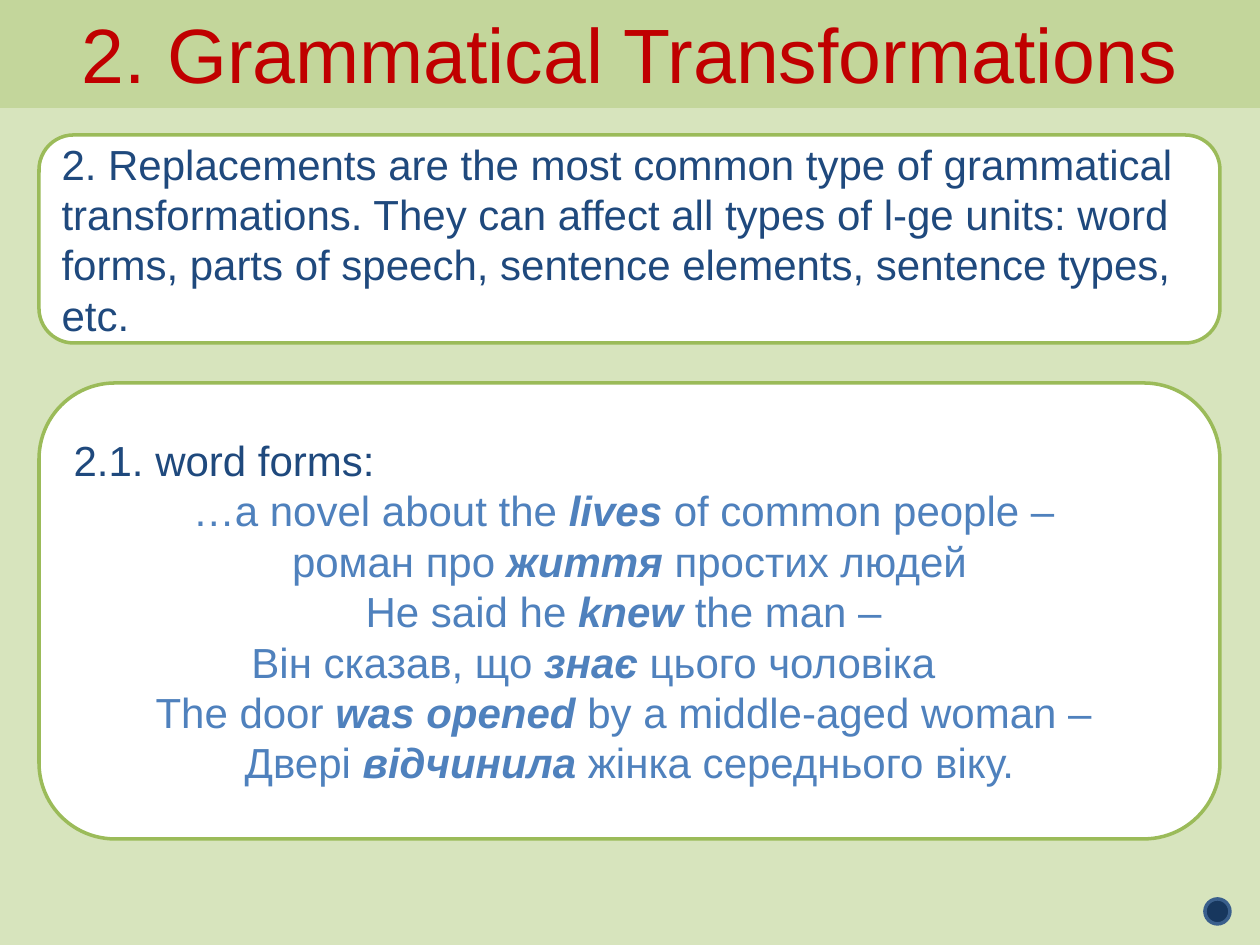
from pptx import Presentation
from pptx.dml.color import RGBColor
from pptx.enum.shapes import MSO_SHAPE
from pptx.enum.text import MSO_ANCHOR, PP_ALIGN
from pptx.util import Emu, Pt

PX = 914400 // 126
NAVY, BLUE, GREEN = "1F497D", "4F81BD", "9BBB59"

EXAMPLES = [
    ("…a novel about the ", "lives", " of common people – "),
    ("роман про ", "життя", " простих людей"),
    ("He said he ", "knew", " the man – "),
    ("Він сказав, що ", "знає", " цього чоловіка\t\t"),
    ("The door ", "was opened", " by a middle-aged woman – "),
    ("Двері ", "відчинила", " жінка середнього віку."),
]


def color(hex_text):
    return RGBColor.from_string(hex_text)


def add_box(s, kind, box, fill, line):
    sp = s.shapes.add_shape(kind, *(Emu(v * PX) for v in box))
    sp.shadow.inherit = False
    sp.fill.solid()
    sp.fill.fore_color.rgb = color(fill)
    sp.line.color.rgb = color(line)
    sp.line.width = Pt(2)
    sp.text_frame.word_wrap = True
    sp.text_frame.vertical_anchor = MSO_ANCHOR.MIDDLE
    return sp


def add_run(p, text, size, hex_text, emphasis=False):
    r = p.add_run()
    r.text = text
    r.font.name = "Arial"
    r.font.size = Pt(size)
    r.font.color.rgb = color(hex_text)
    if emphasis:
        r.font.bold = r.font.italic = True


def add_title(s, box):
    sp = add_box(s, MSO_SHAPE.RECTANGLE, box, "C3D69B", "C3D69B")
    p = sp.text_frame.paragraphs[0]
    p.alignment = PP_ALIGN.CENTER
    add_run(p, "2. Grammatical Transformations", 44, "C00000")


def add_card(s, box, lead):
    """Add a white rounded card opening with a left-aligned lead text."""
    sp = add_box(s, MSO_SHAPE.ROUNDED_RECTANGLE, box, "FFFFFF", GREEN)
    p = sp.text_frame.paragraphs[0]
    p.alignment = PP_ALIGN.LEFT
    add_run(p, lead, 24, NAVY)
    return sp.text_frame


def add_examples(s, box):
    tf = add_card(s, box, "2.1. word forms:")
    for before, key, after in EXAMPLES:
        p = tf.add_paragraph()
        p.alignment = PP_ALIGN.CENTER
        add_run(p, before, 24, BLUE)
        add_run(p, key, 24, BLUE, emphasis=True)
        add_run(p, after, 24, BLUE)


def main():
    prs = Presentation()
    prs.slide_width, prs.slide_height = Emu(1260 * PX), Emu(945 * PX)
    s = prs.slides.add_slide(prs.slide_layouts[6])
    s.background.fill.solid()
    s.background.fill.fore_color.rgb = color("D7E4BD")

    add_title(s, (0, 0, 1260, 106))
    add_box(s, MSO_SHAPE.OVAL, (1205, 899, 25, 25), "17375E", "3A5F8C")
    add_card(s, (39, 135, 1181, 208),
             "2. Replacements are the most common type of grammatical "
             "transformations. They can affect all types of l-ge units: word "
             "forms, parts of speech, sentence elements, sentence types, etc.")
    add_examples(s, (39, 383, 1181, 456))
    prs.save("out.pptx")


if __name__ == "__main__":
    main()
